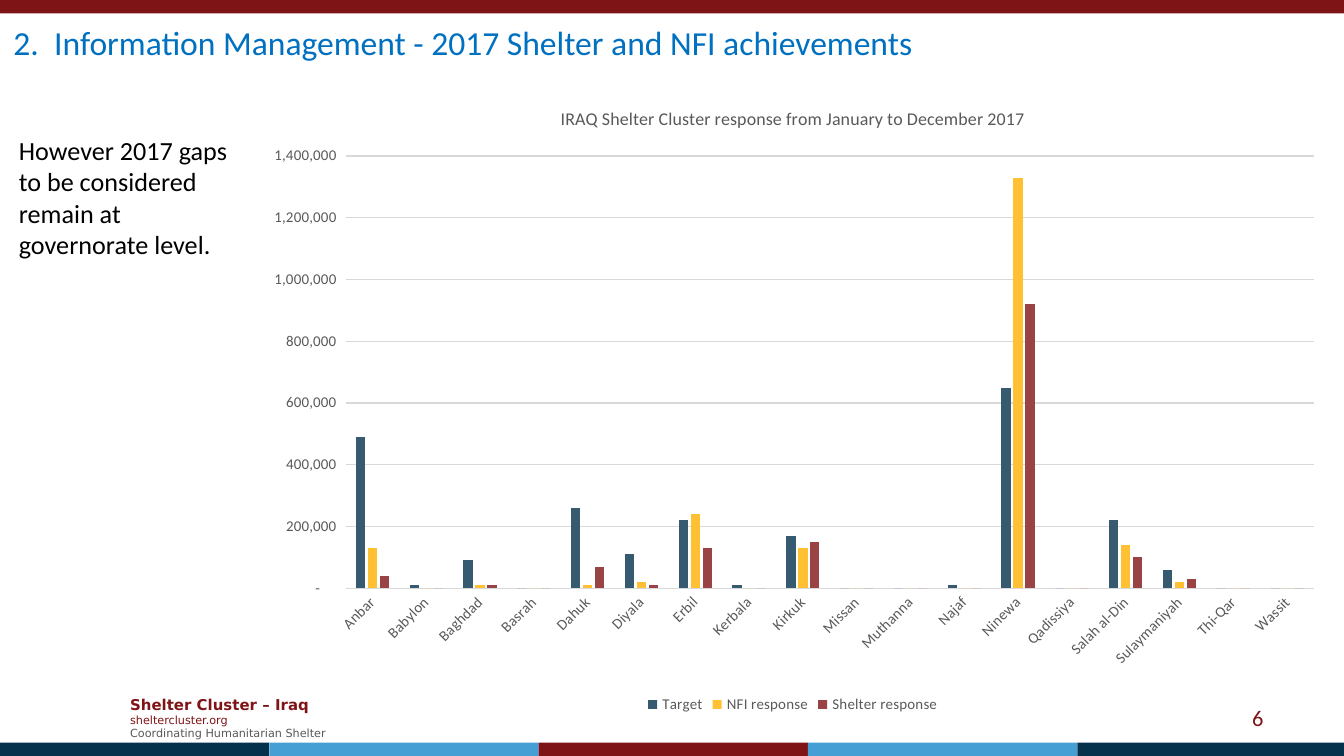
from lxml import etree
from pptx import Presentation
from pptx.chart.data import CategoryChartData
from pptx.dml.color import RGBColor
from pptx.enum.chart import XL_CHART_TYPE as ChartType, XL_LEGEND_POSITION as LegendPos, XL_TICK_MARK as Tick
from pptx.enum.shapes import MSO_SHAPE as Shape
from pptx.enum.text import MSO_ANCHOR as Anchor, MSO_AUTO_SIZE as AutoSize, PP_ALIGN as Align
from pptx.oxml.ns import qn
from pptx.util import Inches, Pt

W = 10
H = W * 9 / 16
RED, NAVY, SKY = "7F1416", "04314C", "459FD5"
BLUE, GREY, RULE, BLACK = "0070C0", "595959", "D9D9D9", "000000"
BODY, FOOT = "Calibri", "DejaVu Sans"

CATEGORIES = ["Anbar", "Babylon", "Baghdad", "Basrah", "Dahuk", "Diyala", "Erbil", "Kerbala", "Kirkuk",
              "Missan", "Muthanna", "Najaf", "Ninewa", "Qadissiya", "Salah al-Din", "Sulaymaniyah",
              "Thi-Qar", "Wassit"]
# Name, colour, people in thousands
SERIES = [
    ("Target", "365A70", [490, 10, 90, 0, 260, 110, 220, 10, 170, 0, 0, 10, 650, 0, 220, 60, 0, 0]),
    ("NFI response", "FFC133", [130, 0, 10, 0, 10, 20, 240, 0, 130, 0, 0, 0, 1330, 0, 140, 20, 0, 0]),
    ("Shelter response", "994345", [40, 0, 10, 0, 70, 10, 130, 0, 150, 0, 0, 0, 920, 0, 100, 30, 0, 0]),
]
NUMBER_FORMAT = '_(* #,##0_);_(* \\(#,##0\\);_(* "-"??_);_(@_)'


def rgb(value):
    return RGBColor.from_string(value)


def set_font(font, size, color, name=BODY, bold=False):
    for key, value in dict(size=Pt(size), name=name, bold=bold).items():
        setattr(font, key, value)
    font.color.rgb = rgb(color)


def place(sp, box):
    for key, value in zip(("left", "top", "width", "height"), box):
        setattr(sp, key, Inches(value))


def write(sp, lines, anchor=Anchor.TOP, align=Align.LEFT):
    """Fill a text shape; each line is (text, font settings)."""
    tf = sp.text_frame
    for key, value in dict(word_wrap=True, auto_size=AutoSize.NONE, vertical_anchor=anchor).items():
        setattr(tf, key, value)
    for i, (text, fmt) in enumerate(lines):
        p = tf.add_paragraph() if i else tf.paragraphs[0]
        for key, value in dict(alignment=align, space_before=Pt(0)).items():
            setattr(p, key, value)
        r = p.add_run()
        r.text = text
        set_font(r.font, **fmt)
    return tf


def add_band(s, box, color):
    sp = s.shapes.add_shape(Shape.RECTANGLE, *map(Inches, box))
    sp.shadow.inherit = False
    sp.fill.solid()
    sp.fill.fore_color.rgb = rgb(color)
    sp.line.fill.background()


def add_frame(s, box):
    """Top bar and the row of equal colour bands at the foot."""
    left, top, width, height = box
    bar, bleed = 0.1, 0.02
    add_band(s, (left, top, width, bar), RED)
    colors = [NAVY, SKY, RED, SKY, NAVY]
    step = (width + bleed) / len(colors)
    for i, color in enumerate(colors):
        add_band(s, (left + i * step, top + height - bar, step, bar), color)


def add_footer(s, box):
    """Organisation block on the left, page number on the right."""
    left, top, width, height = box
    org = s.shapes.add_textbox(*map(Inches, (left, top, width * 0.2, height)))
    write(org, [
        ("Shelter Cluster – Iraq", dict(size=8, color=RED, name=FOOT, bold=True)),
        ("sheltercluster.org", dict(size=6, color=RED, name=FOOT)),
        ("Coordinating Humanitarian Shelter", dict(size=6, color=GREY, name=FOOT)),
    ], Anchor.MIDDLE)
    number = s.shapes.add_textbox(*map(Inches, (left + width * 0.73, top + 0.07, width * 0.27, 0.3)))
    write(number, [("6", dict(size=12, color=RED))], Anchor.MIDDLE, Align.RIGHT)


def add_title(s, box):
    place(s.shapes.title, box)
    text = "2.  Information Management - 2017 Shelter and NFI achievements"
    write(s.shapes.title, [(text, dict(size=18, color=BLUE))], Anchor.MIDDLE)


def add_message(s, box):
    sp = s.placeholders[1]
    place(sp, box)
    text = "However 2017 gaps to be considered remain at governorate level."
    tf = write(sp, [(text, dict(size=14, color=BLACK))])
    pPr = tf.paragraphs[0]._p.get_or_add_pPr()
    pPr.set("marL", "0")
    pPr.set("indent", "0")
    etree.SubElement(pPr, qn("a:buNone"))


def set_plot_area(chart, **percents):
    """Fix the inner plot area in percent of the chart."""
    plot_area = chart._chartSpace.chart.plotArea
    for old in plot_area.findall(qn("c:layout")):
        plot_area.remove(old)
    layout = etree.Element(qn("c:layout"))
    manual = etree.SubElement(layout, qn("c:manualLayout"))
    settings = dict(layoutTarget="inner", xMode="edge", yMode="edge")
    settings.update({key: value / 100 for key, value in percents.items()})
    for key, value in settings.items():
        etree.SubElement(manual, qn("c:" + key)).set("val", str(value))
    plot_area.insert(0, layout)


def add_response_chart(s, box):
    data = CategoryChartData(number_format=NUMBER_FORMAT)
    data.categories = CATEGORIES
    for name, _, thousands in SERIES:
        data.add_series(name, [v * 1000 for v in thousands])
    chart = s.shapes.add_chart(ChartType.COLUMN_CLUSTERED, *map(Inches, box), data).chart
    set_font(chart.font, 8, BLACK)

    # Title and legend
    tf = chart.chart_title.text_frame
    tf.text = "IRAQ Shelter Cluster response from January to December 2017"
    set_font(tf.paragraphs[0].runs[0].font, 9.6, GREY)
    chart.has_legend = True
    for key, value in dict(position=LegendPos.BOTTOM, include_in_layout=False).items():
        setattr(chart.legend, key, value)
    set_font(chart.legend.font, 8, GREY)

    # Columns
    plot = chart.plots[0]
    for key, value in dict(gap_width=219, overlap=-27, vary_by_categories=False).items():
        setattr(plot, key, value)
    for series, (_, color, _) in zip(plot.series, SERIES):
        series.format.fill.solid()
        series.format.fill.fore_color.rgb = rgb(color)

    # Axes
    cat, val = chart.category_axis, chart.value_axis
    for axis in (cat, val):
        axis.major_tick_mark = axis.minor_tick_mark = Tick.NONE
        set_font(axis.tick_labels.font, 8, GREY)
    for key, value in dict(minimum_scale=0, maximum_scale=1400000, major_unit=200000).items():
        setattr(val, key, value)
    val.tick_labels.number_format = NUMBER_FORMAT
    val.tick_labels.number_format_is_linked = False
    val.format.line.fill.background()
    for line in (cat.format.line, val.major_gridlines.format.line):
        line.color.rgb = rgb(RULE)
        line.width = Pt(0.75)
    slant = cat._element.find(qn("c:txPr")).find(qn("a:bodyPr"))
    slant.set("rot", str(-45 * 60000))
    slant.set("vert", "horz")
    set_plot_area(chart, x=8.8, y=11.45, w=89.2, h=68)


def main():
    prs = Presentation()
    prs.slide_width, prs.slide_height = Inches(W), Inches(H)
    s = prs.slides.add_slide(prs.slide_layouts[1])
    add_frame(s, (0, 0, W, H))
    add_footer(s, (0.87, 5.12, 8.63, 0.44))
    add_title(s, (0, 0.13, W, 0.37))
    add_response_chart(s, (1.86, 0.62, 8.08, 4.73))
    add_message(s, (0.04, 0.95, 1.81, 1.04))
    prs.save("out.pptx")


if __name__ == "__main__":
    main()
